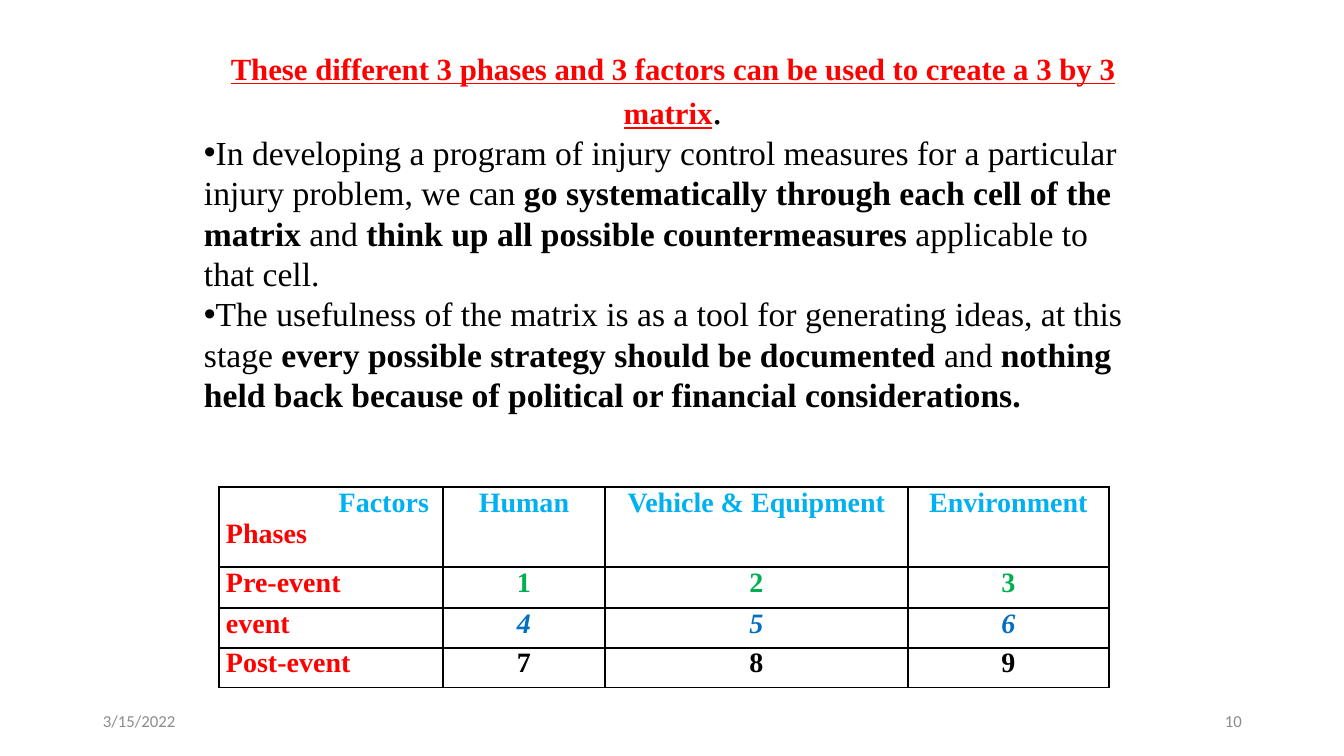
"""Build the slide on the 3 by 3 matrix of injury phases and factors."""
from lxml import etree
from pptx import Presentation
from pptx.dml.color import RGBColor
from pptx.enum.text import MSO_ANCHOR, MSO_AUTO_SIZE, PP_ALIGN
from pptx.oxml.ns import qn
from pptx.util import Pt

LEFT, CENTER, RIGHT = PP_ALIGN.LEFT, PP_ALIGN.CENTER, PP_ALIGN.RIGHT
TOP, MIDDLE = MSO_ANCHOR.TOP, MSO_ANCHOR.MIDDLE
NO_AUTOFIT = MSO_AUTO_SIZE.NONE
EMU_PER_PX = 914400 / 100.8
SERIF, SANS = "Times New Roman", "Calibri"
COLORS = {
    "black": "000000", "red": "FF0000", "sky": "00B0F0",
    "green": "00B050", "blue": "0070C0", "gray": "8C8C8C",
}

HEADING = "These different 3 phases and 3 factors can be used to create a 3 by 3 matrix"
POINTS = [
    [("In developing a program of injury control measures for a particular "
      "injury problem, we can ", False),
     ("go systematically through each cell of the matrix ", True),
     ("and ", False),
     ("think up all possible countermeasures", True),
     (" applicable to that cell.", False)],
    [("The usefulness of the matrix is as a tool for generating ideas, "
      "at this stage ", False),
     ("every possible strategy should be documented ", True),
     ("and ", False),
     ("nothing held back because of political or financial considerations.", True)],
]
FACTORS = ["Human", "Vehicle & Equipment", "Environment"]
PHASES = [
    ("Pre-event", {"color": "green"}),
    ("event", {"color": "blue", "italic": True}),
    ("Post-event", {"color": "black"}),
]
COLUMN_WIDTHS = [224, 162, 303, 201]
ROW_HEIGHTS = [80, 41, 40, 40]


def px(length):
    """Turn pixels into EMU."""
    return round(length * EMU_PER_PX)


def write(paragraph, text, size=20, color="black", font=SERIF, bold=False,
          italic=False, underline=False, align=None):
    """Append formatted text to a paragraph."""
    if align is not None:
        paragraph.alignment = align
    run = paragraph.add_run()
    run.text = text
    run.font.name = font
    run.font.size = Pt(size)
    run.font.bold = bold
    run.font.italic = italic
    run.font.underline = underline
    run.font.color.rgb = RGBColor.from_string(COLORS[color])


class MatrixSlide:
    """Hold the deck, its current slide and the style of its elements."""

    def __init__(self, width, height):
        """Start a deck with one title and content slide."""
        self.deck = Presentation()
        self.deck.slide_width, self.deck.slide_height = px(width), px(height)
        self.slide = self.deck.slides.add_slide(self.deck.slide_layouts[1])

    def place(self, holder, left, top, width, height, anchor):
        """Move a text holder and return its frame."""
        holder.left, holder.top = px(left), px(top)
        holder.width, holder.height = px(width), px(height)
        frame = holder.text_frame
        frame.word_wrap = True
        frame.auto_size = NO_AUTOFIT
        frame.vertical_anchor = anchor
        frame.margin_left = frame.margin_right = px(10)
        frame.margin_top = frame.margin_bottom = 0
        return frame

    def heading(self, text, *box):
        """Write the underlined title."""
        title = self.place(self.slide.shapes.title, *box, TOP).paragraphs[0]
        title.line_spacing = Pt(33)
        write(title, text, size=22, color="red", bold=True, underline=True, align=CENTER)
        write(title, ".", size=28)

    def bullets(self, points, *box):
        """Write the bulleted list in the body placeholder."""
        frame = self.place(self.slide.placeholders[1], *box, TOP)
        for index, point in enumerate(points):
            item = frame.paragraphs[0] if index == 0 else frame.add_paragraph()
            item.line_spacing = Pt(28.8)
            item.space_before = Pt(0)
            properties = item._p.get_or_add_pPr()
            properties.set("marL", "0")
            properties.set("indent", "0")
            etree.SubElement(properties, qn("a:buChar"), char="•")
            for text, bold in point:
                write(item, text, size=24, bold=bold, align=LEFT)

    def footer(self, text, align, *box):
        """Write a small gray note at the foot of the slide."""
        note = self.slide.shapes.add_textbox(0, 0, 0, 0)
        frame = self.place(note, *box, MIDDLE)
        write(frame.paragraphs[0], text, size=12, color="gray", font=SANS, align=align)

    def style_cell(self, cell):
        """Give a cell black borders, no fill and narrow margins."""
        properties = cell._tc.get_or_add_tcPr()
        for side in ("L", "R", "T", "B"):
            line = etree.SubElement(properties, qn(f"a:ln{side}"), w=str(Pt(1)))
            fill = etree.SubElement(line, qn("a:solidFill"))
            etree.SubElement(fill, qn("a:srgbClr"), val=COLORS["black"])
        cell.fill.background()
        cell.margin_left = cell.margin_right = px(7)
        cell.margin_top = cell.margin_bottom = 0
        cell.vertical_anchor = TOP

    def matrix(self, factors, phases, left, top):
        """Draw the table of phases against factors."""
        table = self.slide.shapes.add_table(
            len(ROW_HEIGHTS), len(COLUMN_WIDTHS), px(left), px(top),
            px(sum(COLUMN_WIDTHS)), px(sum(ROW_HEIGHTS))).table
        table.first_row = table.horz_banding = False
        for column, width in zip(table.columns, COLUMN_WIDTHS):
            column.width = px(width)
        for row, height in zip(table.rows, ROW_HEIGHTS):
            row.height = px(height)
        for cell in table.iter_cells():
            self.style_cell(cell)

        corner = table.cell(0, 0)
        corner.margin_right = px(14)
        write(corner.text_frame.paragraphs[0], "Factors", color="sky", bold=True, align=RIGHT)
        write(corner.text_frame.add_paragraph(), "Phases", color="red", bold=True, align=LEFT)
        for column, factor in enumerate(factors, 1):
            self.fill_cell(table, 0, column, factor, color="sky", align=CENTER)
        for row, (phase, number_format) in enumerate(phases, 1):
            self.fill_cell(table, row, 0, phase, color="red", align=LEFT)
            for column in range(1, len(factors) + 1):
                number = (row - 1) * len(factors) + column
                self.fill_cell(table, row, column, str(number), align=CENTER, **number_format)

    def fill_cell(self, table, row, column, text, **text_format):
        """Write bold text in one table cell."""
        write(table.cell(row, column).text_frame.paragraphs[0], text, bold=True, **text_format)


def main():
    """Build and save the slide."""
    page = MatrixSlide(1344, 756)
    page.heading(HEADING, 194, 40, 958, 92)
    page.bullets(POINTS, 194, 132, 958, 290)
    page.matrix(FACTORS, PHASES, 219, 487)
    page.footer("3/15/2022", LEFT, 93, 701, 302, 40)
    page.footer("10", RIGHT, 950, 701, 302, 40)
    page.deck.save("out.pptx")


if __name__ == "__main__":
    main()
